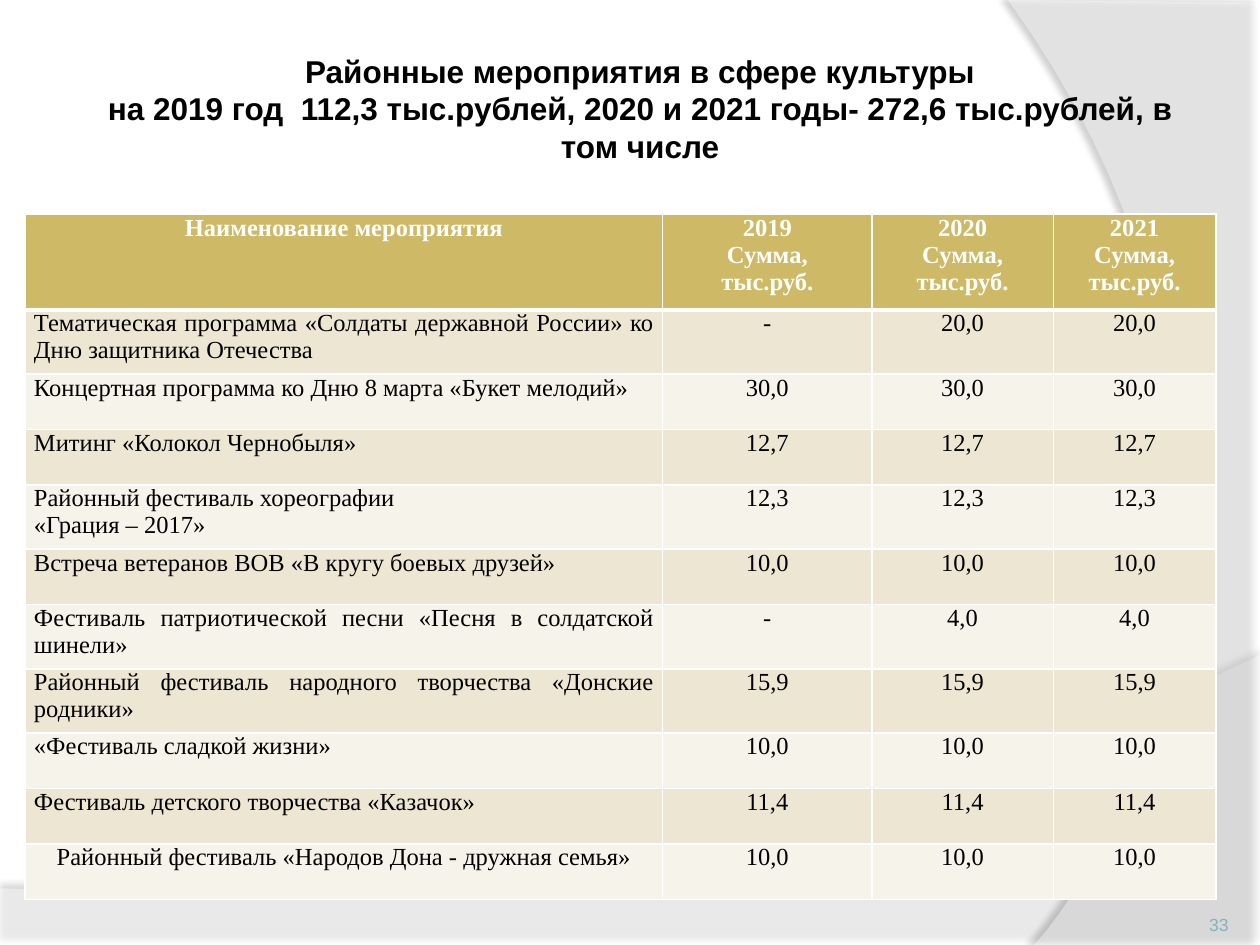
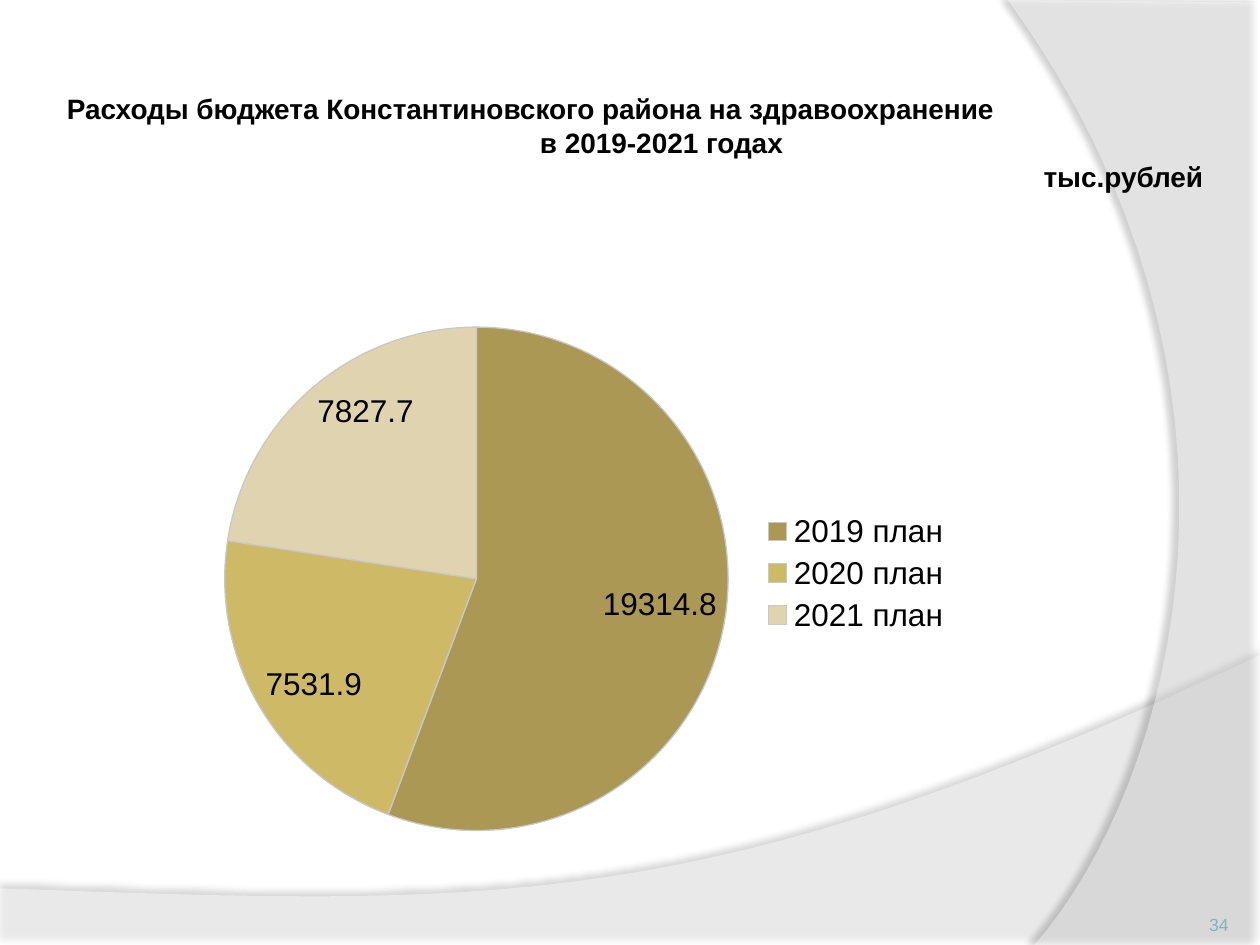
"""Build two budget slides: district culture events and health care spending."""
import lxml.etree
import pptx
import pptx.chart.data
import pptx.dml.color
import pptx.enum.chart
import pptx.enum.text
import pptx.oxml
import pptx.oxml.ns
import pptx.util

COLUMNS, ROWS = 100, 75
BLACK, WHITE, GOLD = "000000", "FFFFFF", "CEB966"
STRIPES = ("F6F3EA", "EDE6D3")
SLICES = ("AA9854", GOLD, "E0D4B0")
SLICE_EDGE, PAGE_BLUE = "C8C8C8", "83B3BB"
SANS, SERIF = "Arial", "Times New Roman"
ALIGN = pptx.enum.text.PP_ALIGN
ANCHOR = pptx.enum.text.MSO_ANCHOR

EVENTS = [
    ("Тематическая программа «Солдаты державной России» ко Дню защитника Отечества", "-", "20,0", "20,0"),
    ("Концертная программа ко Дню 8 марта «Букет мелодий»", "30,0", "30,0", "30,0"),
    ("Митинг «Колокол Чернобыля»", "12,7", "12,7", "12,7"),
    ("Районный фестиваль хореографии\n«Грация – 2017»", "12,3", "12,3", "12,3"),
    ("Встреча ветеранов ВОВ «В кругу боевых друзей»", "10,0", "10,0", "10,0"),
    ("Фестиваль патриотической песни «Песня в солдатской шинели»", "-", "4,0", "4,0"),
    ("Районный фестиваль народного творчества «Донские родники»", "15,9", "15,9", "15,9"),
    ("«Фестиваль сладкой жизни»", "10,0", "10,0", "10,0"),
    ("Фестиваль детского творчества «Казачок»", "11,4", "11,4", "11,4"),
    ("Районный фестиваль «Народов Дона - дружная семья»", "10,0", "10,0", "10,0"),
]


def rgb(value):
    """Turn a hex string into a colour."""
    return pptx.dml.color.RGBColor.from_string(value)


def curve(start, first, second, end, steps=32):
    """Return points along a cubic curve, without its start."""
    points = []
    for step in range(1, steps + 1):
        t = step / steps
        weights = ((1 - t) ** 3, 3 * t * (1 - t) ** 2, 3 * t * t * (1 - t), t ** 3)
        corners = (start, first, second, end)
        points.append(tuple(sum(w * c[axis] for w, c in zip(weights, corners)) for axis in (0, 1)))
    return points


class Deck:
    """Hold the shared style and the current slide."""

    def __init__(self):
        self.show = pptx.Presentation()
        self.show.slide_width = pptx.util.Inches(10)
        self.show.slide_height = pptx.util.Inches(7.5)
        self.slide = None

    def x(self, columns):
        return pptx.util.Emu(round(self.show.slide_width * columns / COLUMNS))

    def y(self, rows):
        return pptx.util.Emu(round(self.show.slide_height * rows / ROWS))

    def box(self, left, top, width, height):
        return self.x(left), self.y(top), self.x(width), self.y(height)

    def new_slide(self, page):
        self.slide = self.show.slides.add_slide(self.show.slide_layouts[5])
        low = [(0, 70.5), (0, 75), (100, 75), (100, 52)]
        low += curve(low[-1], (55.9, 72.9), (39.1, 71.9), low[0])
        side = [(100, 0.2), (100, 75), (82.1, 75)]
        side += curve(side[-1], (93.5, 61.9), (101.8, 30), (80, 0))
        self.wave(low, 2, opacity=45, shade=35, distance=3.5, direction=270)
        self.wave(side, 3, opacity=40, shade=45, distance=4, direction=180)
        number = self.slide.shapes.add_textbox(*self.box(89.2, 70.2, 8.3, 4)).text_frame
        number.word_wrap = True
        number.vertical_anchor = ANCHOR.BOTTOM
        number.margin_left = number.margin_right = number.margin_top = number.margin_bottom = 0
        self.lines(number, [(page, ALIGN.RIGHT)], 10, PAGE_BLUE)

    def wave(self, points, depth, opacity, shade, distance, direction):
        start, *rest = [(self.x(column), self.y(row)) for column, row in points]
        outline = self.slide.shapes.build_freeform(*start)
        outline.add_line_segments(rest, close=True)
        band = outline.convert_to_shape()
        band.fill.solid()
        band.fill.fore_color.rgb = rgb(WHITE)
        band.line.fill.background()
        properties = band._element.spPr
        white = properties.find(".//" + pptx.oxml.ns.qn("a:srgbClr"))
        lxml.etree.SubElement(white, pptx.oxml.ns.qn("a:alpha"), val=str(opacity * 1000))
        properties.append(pptx.oxml.parse_xml(
            f'<a:effectLst {pptx.oxml.ns.nsdecls("a")}>'
            f'<a:outerShdw blurRad="{pptx.util.Pt(4)}" dist="{pptx.util.Pt(distance)}" '
            f'dir="{direction * 60000}" algn="ctr" rotWithShape="0">'
            f'<a:srgbClr val="{BLACK}"><a:alpha val="{shade * 1000}"/></a:srgbClr>'
            '</a:outerShdw></a:effectLst>'))
        self.slide.shapes._spTree.insert(depth, band._element)

    def lines(self, frame, lines, size, color, font=SANS, bold=False):
        for index, (words, align) in enumerate(lines):
            paragraph = frame.paragraphs[0] if index == 0 else frame.add_paragraph()
            paragraph.alignment = align
            run = paragraph.add_run()
            run.text = words
            run.font.size = pptx.util.Pt(size)
            run.font.name = font
            run.font.bold = bold
            run.font.color.rgb = rgb(color)

    def title(self, place, lines, size):
        heading = self.slide.shapes.title
        heading.left, heading.top, heading.width, heading.height = self.box(*place)
        frame = heading.text_frame
        frame.word_wrap = True
        frame.auto_size = pptx.enum.text.MSO_AUTO_SIZE.NONE
        frame.vertical_anchor = ANCHOR.TOP
        self.lines(frame, lines, size, BLACK, bold=True)
        return frame

    def cell(self, cell, words, align, fill, color, bold, top, bottom):
        cell.margin_left = cell.margin_right = self.x(0.7)
        cell.margin_top = cell.margin_bottom = 0
        self.lines(cell.text_frame, [(line, align) for line in words.split("\n")],
                   14, color, SERIF, bold)
        for side, width in (("L", 1), ("R", 1), ("T", top), ("B", bottom)):
            cell._tc.get_or_add_tcPr().append(pptx.oxml.parse_xml(
                f'<a:ln{side} {pptx.oxml.ns.nsdecls("a")} w="{pptx.util.Pt(width)}">'
                f'<a:solidFill><a:srgbClr val="{WHITE}"/></a:solidFill></a:ln{side}>'))
        cell.fill.solid()
        cell.fill.fore_color.rgb = rgb(fill)

    def table(self, left, top, widths, heights, header, records):
        place = self.box(left, top, sum(widths), sum(heights))
        grid = self.slide.shapes.add_table(len(heights), len(widths), *place).table
        for column, width in zip(grid.columns, widths):
            column.width = self.x(width)
        for row, height in zip(grid.rows, heights):
            row.height = self.y(height)
        for r, record in enumerate([header, *records]):
            for c, words in enumerate(record):
                justified = c == 0 and 0 < r < len(records)
                self.cell(grid.cell(r, c), words,
                          ALIGN.JUSTIFY if justified else ALIGN.CENTER,
                          STRIPES[r % 2] if r else GOLD, BLACK if r else WHITE, r == 0,
                          top=3 if r == 1 else 1, bottom=1 if r else 3)

    def pie(self, place, name, shares, plot):
        data = pptx.chart.data.CategoryChartData()
        data.categories = list(shares)
        data.add_series(name, list(shares.values()))
        chart = self.slide.shapes.add_chart(
            pptx.enum.chart.XL_CHART_TYPE.PIE, *self.box(*place), data).chart
        chart.has_title = False
        chart.font.size = pptx.util.Pt(18)
        chart.font.name = SANS
        chart.font.color.rgb = rgb(BLACK)
        chart.has_legend = True
        chart.legend.position = pptx.enum.chart.XL_LEGEND_POSITION.RIGHT
        chart.legend.include_in_layout = False
        pie = chart.plots[0]
        pie.vary_by_categories = True
        pie.has_data_labels = True
        pie.data_labels.show_value = True
        pie.data_labels.show_percentage = False
        pie.data_labels.position = pptx.enum.chart.XL_LABEL_POSITION.INSIDE_END
        for index, color in enumerate(SLICES):
            share = pie.series[0].points[index].format
            share.fill.solid()
            share.fill.fore_color.rgb = rgb(color)
            share.line.color.rgb = rgb(SLICE_EDGE)
            share.line.width = pptx.util.Pt(0.75)
        area = chart._chartSpace.chart.plotArea
        for layout in area.findall(pptx.oxml.ns.qn("c:layout")):
            area.remove(layout)
        sizes = "".join(f'<c:{key} val="{value}"/>' for key, value in zip("xywh", plot))
        area.insert(0, pptx.oxml.parse_xml(
            f'<c:layout {pptx.oxml.ns.nsdecls("c")}><c:manualLayout>'
            '<c:layoutTarget val="inner"/><c:xMode val="edge"/><c:yMode val="edge"/>'
            f'{sizes}</c:manualLayout></c:layout>'))


def main():
    """Fill and save both slides."""
    deck = Deck()

    deck.new_slide("33")
    deck.title((5.9, 3.6, 89.8, 10.1), [
        ("Районные мероприятия в сфере культуры", ALIGN.CENTER),
        ("на 2019 год  112,3 тыс.рублей, 2020 и 2021 годы- 272,6 тыс.рублей, в том числе",
         ALIGN.CENTER)], 18)
    years = [f"{year}\nСумма,\nтыс.руб." for year in (2019, 2020, 2021)]
    deck.table(2, 17, (50.6, 16.6, 14.4, 12.9),
               (7.6, 5.1, 4.4, 4.4, 5.1, 4.4, 5.1, 5.1, 4.4, 4.4, 4.4),
               ("Наименование мероприятия", *years), EVENTS)

    deck.new_slide("34")
    heading = deck.title((4.3, 6.8, 95.7, 9.1), [
        ("Расходы бюджета Константиновского района на здравоохранение", ALIGN.LEFT),
        ("в 2019-2021 годах", ALIGN.CENTER),
        ("тыс.рублей", ALIGN.RIGHT)], 16)
    heading.margin_right = deck.x(4.5)
    heading.paragraphs[1]._p.get_or_add_pPr().set("marL", str(deck.x(4.2)))
    deck.pie((9.8, 23.3, 66.7, 44.4), "Series 1",
             {"2019 план": 19314.8, "2020 план": 7531.9, "2021 план": 7827.7},
             plot=(0.12, 0.06, 0.6, 0.9))

    deck.show.save("out.pptx")


if __name__ == "__main__":
    main()
